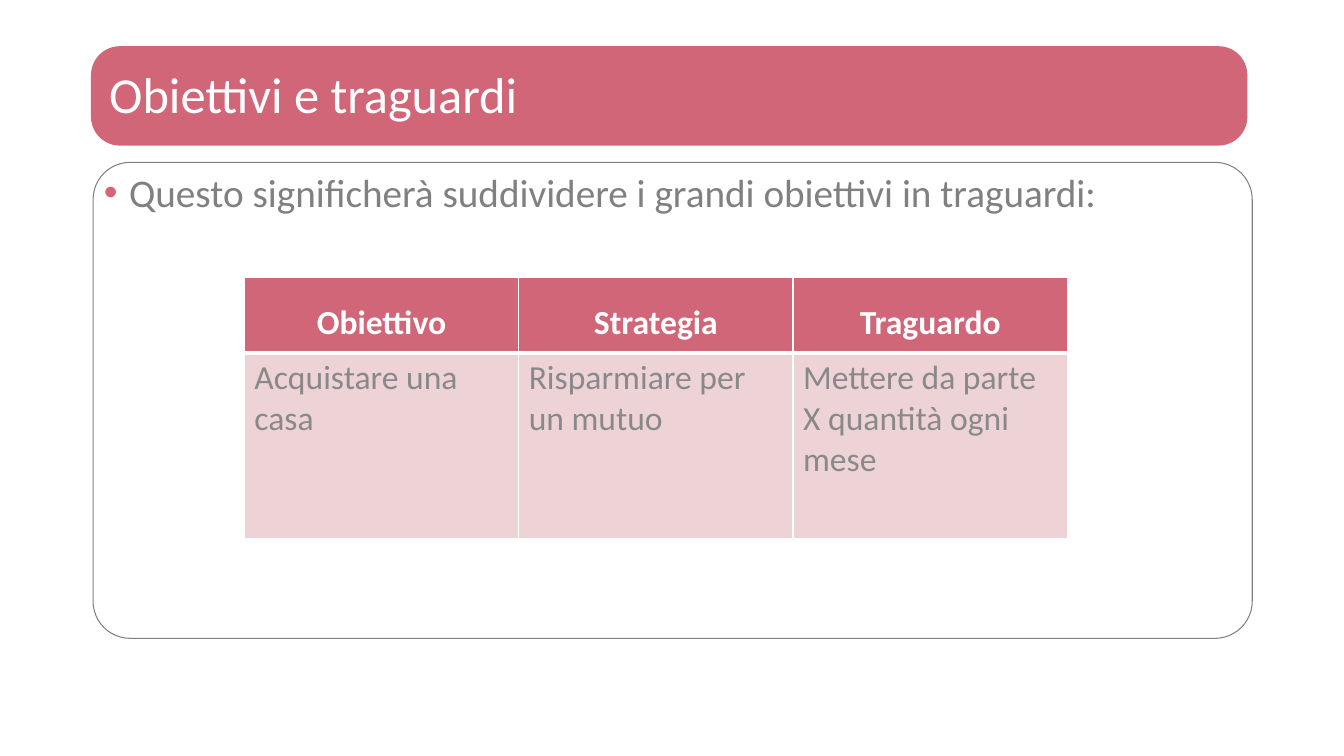
"""Builds the slide on goals and milestones, with its table."""
from lxml import etree
from pptx import Presentation
from pptx.dml.color import RGBColor
from pptx.enum import shapes, text
from pptx.oxml import ns
from pptx.util import Pt

HUES = {"rose": "D16678", "pale": "EED3D6", "white": "FFFFFF",
        "gray": "808080", "ash": "898989"}
ALIGN = text.PP_ALIGN
ANCHOR = text.MSO_ANCHOR


def tint(name):
    return RGBColor.from_string(HUES[name])


def write(frame, words, size=24, hue="gray", bold=False, align=ALIGN.LEFT,
          space=1.0):
    frame.word_wrap = True
    frame.margin_left = frame.margin_right = Pt(0)
    frame.margin_top = frame.margin_bottom = Pt(0)
    para = frame.paragraphs[0]
    para.alignment = align
    para.line_spacing = space
    para.space_before = Pt(0)
    run = para.add_run()
    run.text = words
    font = run.font
    font.name, font.size, font.bold = "Calibri", Pt(size), bold
    font.color.rgb = tint(hue)
    return para


deck = Presentation()
deck.slide_width, deck.slide_height = Pt(960), Pt(540)
slide = deck.slides.add_slide(deck.slide_layouts[1])
tree = slide.shapes

band = tree.add_shape(shapes.MSO_SHAPE.ROUNDED_RECTANGLE,
                      Pt(65), Pt(33), Pt(826), Pt(71))
band.adjustments[0] = 0.29
band.shadow.inherit = False
band.fill.solid()
band.fill.fore_color.rgb = tint("rose")
band.line.fill.background()
tree._spTree.insert(2, band._element)

title = tree.title
title.left, title.top, title.width, title.height = Pt(78), Pt(44.5), Pt(805), Pt(52)
title.text_frame.auto_size = text.MSO_AUTO_SIZE.NONE
title.text_frame.vertical_anchor = ANCHOR.MIDDLE
write(title.text_frame, "Obiettivi e traguardi", size=36, hue="white", space=0.8)

body = slide.placeholders[1]
body.left, body.top, body.width, body.height = Pt(66.5), Pt(116), Pt(828), Pt(340)
geom = etree.SubElement(body._element.spPr, ns.qn("a:prstGeom"), prst="roundRect")
guides = etree.SubElement(geom, ns.qn("a:avLst"))
etree.SubElement(guides, ns.qn("a:gd"), name="adj", fmla="val 7800")
body.line.color.rgb = tint("gray")
body.line.width = Pt(0.75)
body.text_frame.auto_size = text.MSO_AUTO_SIZE.NONE
body.text_frame.vertical_anchor = ANCHOR.TOP
para = write(body.text_frame,
             "Questo significherà suddividere i grandi obiettivi in traguardi:",
             size=28, space=0.9)
props = para._p.get_or_add_pPr()
props.set("marL", str(Pt(18)))
props.set("indent", str(-Pt(18)))
color = etree.SubElement(props, ns.qn("a:buClr"))
etree.SubElement(color, ns.qn("a:srgbClr"), val=HUES["rose"])
etree.SubElement(props, ns.qn("a:buFont"), typeface="Arial")
etree.SubElement(props, ns.qn("a:buChar"), char="•")

rows = [["Obiettivo", "Strategia", "Traguardo"],
        ["Acquistare una casa", "Risparmiare per un mutuo",
         "Mettere da parte X quantità ogni mese"]]
looks = [{"hue": "white", "bold": True, "align": ALIGN.CENTER, "space": 1.5},
         {"hue": "ash"}]
grid = tree.add_table(2, 3, Pt(174.5), Pt(198), Pt(588), Pt(186.5)).table
for col in grid.columns:
    col.width = Pt(196)
for row, tall in zip(grid.rows, (54, 132.5)):
    row.height = Pt(tall)

for r, (row, look) in enumerate(zip(rows, looks)):
    for c, words in enumerate(row):
        cell = grid.cell(r, c)
        write(cell.text_frame, words, **look)
        cell.vertical_anchor = ANCHOR.TOP
        cell.margin_left = cell.margin_right = Pt(7.2)
        cell.margin_top = cell.margin_bottom = Pt(3.6)
        props = cell._tc.get_or_add_tcPr()
        edges = {"L": 1, "R": 1, "T": (1, 3)[r], "B": (3, 1)[r]}
        for side, width in edges.items():
            line = etree.SubElement(props, ns.qn(f"a:ln{side}"), w=str(Pt(width)))
            fill = etree.SubElement(line, ns.qn("a:solidFill"))
            etree.SubElement(fill, ns.qn("a:srgbClr"), val=HUES["white"])
        cell.fill.solid()
        cell.fill.fore_color.rgb = tint(("rose", "pale")[r])

deck.save("out.pptx")
